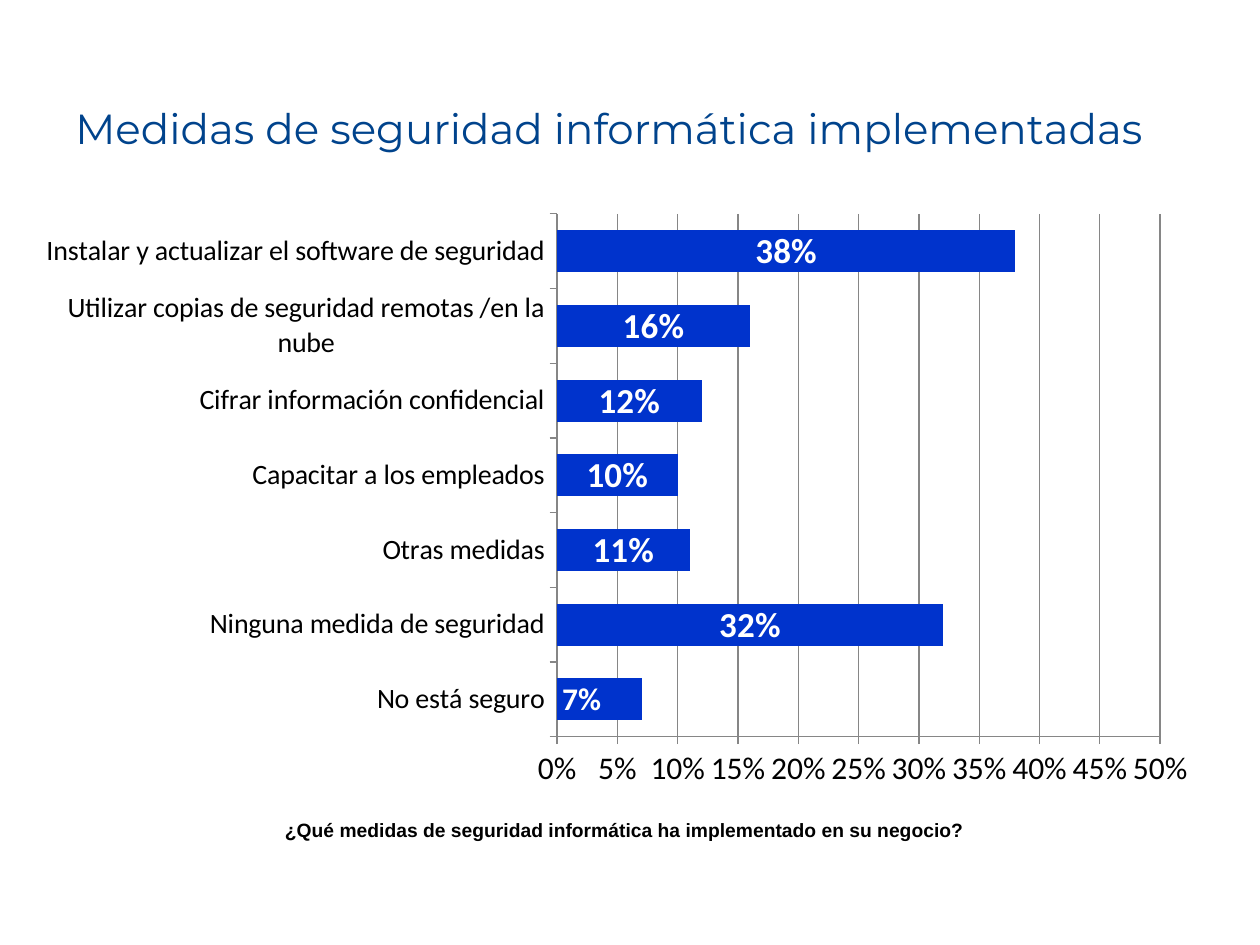
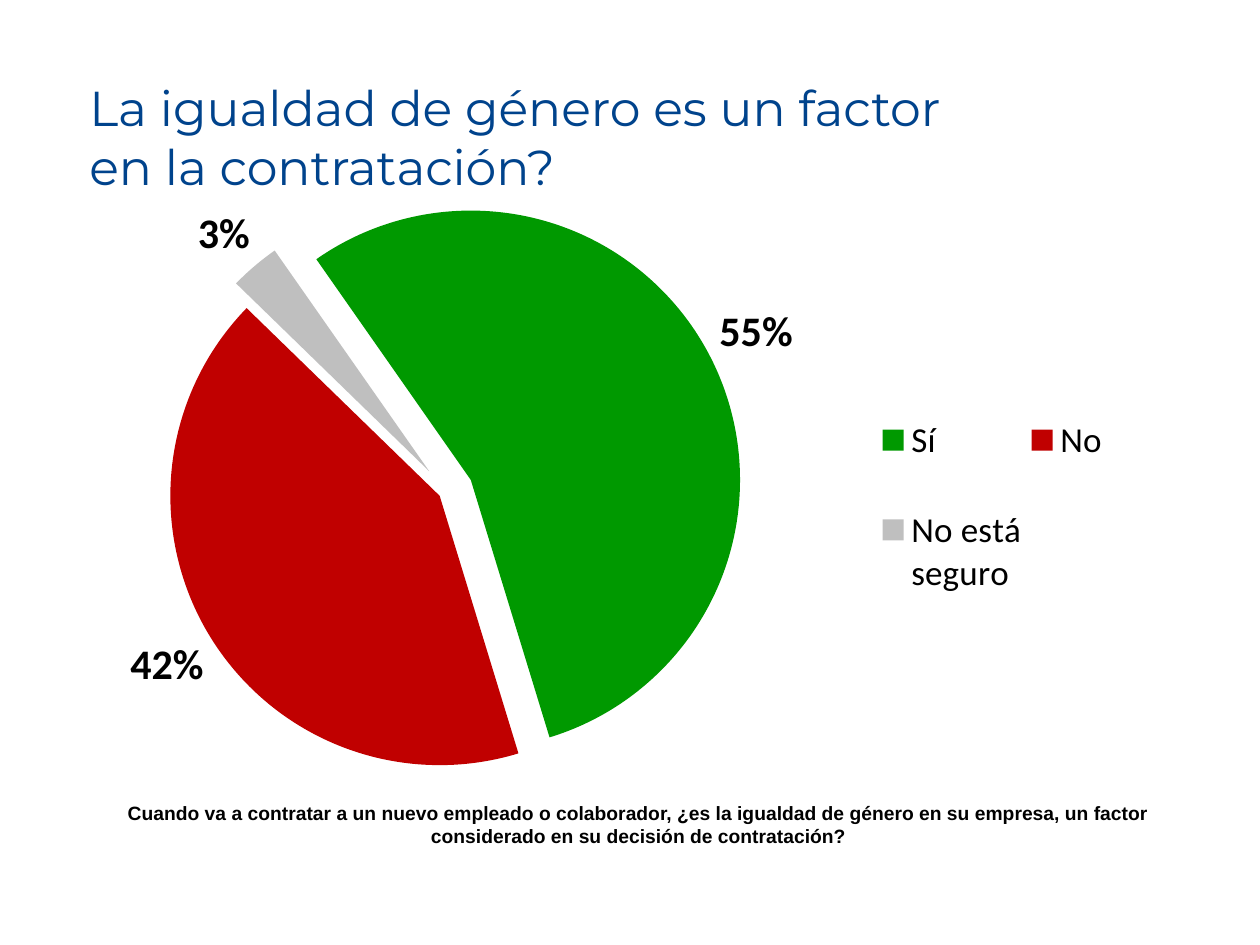
from dataclasses import dataclass

import lxml.etree
import pptx
import pptx.chart.data
import pptx.dml.color
import pptx.enum.chart
import pptx.enum.text
import pptx.oxml.ns
import pptx.util

Pt = pptx.util.Pt
qn = pptx.oxml.ns.qn
CHART_TYPE = pptx.enum.chart.XL_CHART_TYPE
LABEL_POSITION = pptx.enum.chart.XL_LABEL_POSITION
PERCENT = "0%"


@dataclass(frozen=True)
class Theme:
    title_color: str = "00438C"
    text: str = "000000"
    white: str = "FFFFFF"
    bar: str = "0033CC"
    grid: str = "868686"
    yes: str = "009900"
    no: str = "C00000"
    unsure: str = "BFBFBF"
    title_font: str = "Montserrat"
    question_font: str = "Arial"
    chart_font: str = "Calibri"
    long_title_size: int = 24
    title_size: int = 28
    question_size: int = 11
    category_size: int = 16
    chart_size: int = 18
    label_size: int = 20
    pie_label_size: int = 24


THEME = Theme()


def rgb(value):
    return pptx.dml.color.RGBColor.from_string(value)


def style_font(font, size, color, bold=False, name=THEME.chart_font):
    font.size = Pt(size)
    font.bold = bold
    font.name = name
    font.color.rgb = rgb(color)


def add_text(slide, box, text, size, color, name, bold=False, centered=False):
    shape = slide.shapes.add_textbox(*map(Pt, box))
    frame = shape.text_frame
    frame.word_wrap = True
    paragraph = frame.paragraphs[0]
    if centered:
        paragraph.alignment = pptx.enum.text.PP_ALIGN.CENTER
    run = paragraph.add_run()
    run.text = text
    style_font(run.font, size, color, bold, name)
    return frame


def add_title(slide, box, text, size):
    frame = add_text(slide, box, text, size, THEME.title_color, THEME.title_font)
    frame.vertical_anchor = pptx.enum.text.MSO_ANCHOR.MIDDLE


def add_question(slide, box, text):
    add_text(slide, box, text, THEME.question_size, THEME.text,
             THEME.question_font, bold=True, centered=True)


def add_value(parent, tag, value):
    return lxml.etree.SubElement(parent, qn(tag), val=str(value))


def make_layout(fractions, inner=False):
    """Return a manual layout from x, y, width and height as chart fractions."""
    layout = lxml.etree.Element(qn("c:layout"))
    manual = lxml.etree.SubElement(layout, qn("c:manualLayout"))
    if inner:
        add_value(manual, "c:layoutTarget", "inner")
    add_value(manual, "c:xMode", "edge")
    add_value(manual, "c:yMode", "edge")
    for side, fraction in zip("xywh", fractions):
        add_value(manual, f"c:{side}", fraction)
    return layout


def drop_children(element, tag):
    for child in element.findall(qn(tag)):
        element.remove(child)


def add_chart(slide, box, chart_type, shares, plot_area):
    data = pptx.chart.data.CategoryChartData(number_format=PERCENT)
    data.categories = list(shares)
    data.add_series("Series 1", list(shares.values()))
    chart = slide.shapes.add_chart(chart_type, *map(Pt, box), data).chart
    chart.has_title = False
    chart.has_legend = False
    style_font(chart.font, THEME.chart_size, THEME.text)
    area = chart._chartSpace.chart.plotArea
    drop_children(area, "c:layout")
    area.insert(0, make_layout(plot_area, inner=True))
    return chart


def show_labels(series, position, size, color):
    labels = series.data_labels
    labels.show_value = True
    labels.show_percentage = False
    labels.number_format = PERCENT
    labels.number_format_is_linked = False
    labels.position = position
    style_font(labels.font, size, color, bold=True)


def style_axes(chart):
    values = chart.value_axis
    values.minimum_scale = 0
    values.maximum_scale = 0.5
    values.major_unit = 0.05
    values.has_major_gridlines = True
    values.major_gridlines.format.line.color.rgb = rgb(THEME.grid)
    values.tick_labels.number_format = PERCENT
    values.tick_labels.number_format_is_linked = False
    for axis, size in ((values, THEME.chart_size),
                       (chart.category_axis, THEME.category_size)):
        axis.major_tick_mark = pptx.enum.chart.XL_TICK_MARK.OUTSIDE
        axis.format.line.color.rgb = rgb(THEME.grid)
        style_font(axis.tick_labels.font, size, THEME.text)


def add_measures_chart(slide, box):
    shares = {
        "No está seguro": 0.07,
        "Ninguna medida de seguridad": 0.32,
        "Otras medidas": 0.11,
        "Capacitar a los empleados": 0.1,
        "Cifrar información confidencial": 0.12,
        "Utilizar copias de seguridad remotas /en la nube": 0.16,
        "Instalar y actualizar el software de seguridad": 0.38,
    }
    chart = add_chart(slide, box, CHART_TYPE.BAR_STACKED, shares,
                      (0.44, 0.02, 0.52, 0.83))
    style_axes(chart)
    plot = chart.plots[0]
    plot.gap_width = 78
    plot.overlap = 100
    plot.vary_by_categories = False
    bars = plot.series[0]
    bars.format.fill.solid()
    bars.format.fill.fore_color.rgb = rgb(THEME.bar)
    show_labels(bars, LABEL_POSITION.CENTER, THEME.label_size, THEME.white)
    shortest_label = bars.points[0].data_label
    style_font(shortest_label.font, THEME.chart_size, THEME.white, bold=True)
    shortest_label.position = LABEL_POSITION.INSIDE_BASE


def rotate_pie(plot, start_angle):
    pie = plot._element
    drop_children(pie, "c:firstSliceAng")
    add_value(pie, "c:firstSliceAng", start_angle)


def style_slices(series, slices):
    """Give each slice its colour and its distance from the centre in percent."""
    for index, (color, distance) in enumerate(slices):
        fill = series.points[index].format.fill
        fill.solid()
        fill.fore_color.rgb = rgb(color)
        properties = series._element.findall(qn("c:dPt"))[index].find(qn("c:spPr"))
        properties.addprevious(
            lxml.etree.Element(qn("c:explosion"), val=str(distance)))


def add_pie_legend(chart):
    chart.has_legend = True
    legend = chart.legend
    legend.position = pptx.enum.chart.XL_LEGEND_POSITION.RIGHT
    legend.include_in_layout = False
    style_font(legend.font, THEME.label_size, THEME.text)
    element = legend._element
    drop_children(element, "c:layout")
    element.find(qn("c:legendPos")).addnext(
        make_layout((0.72, 0.3, 0.2, 0.45)))


def add_equality_chart(slide, box):
    shares = {"Sí": 0.55, "No": 0.42, "No está seguro": 0.03}
    chart = add_chart(slide, box, CHART_TYPE.PIE, shares,
                      (0.13, 0.05, 0.47, 0.9))
    plot = chart.plots[0]
    plot.vary_by_categories = True
    rotate_pie(plot, start_angle=325)
    series = plot.series[0]
    style_slices(series, ((THEME.yes, 10), (THEME.no, 3), (THEME.unsure, 10)))
    show_labels(series, LABEL_POSITION.OUTSIDE_END, THEME.pie_label_size, THEME.text)
    add_pie_legend(chart)


def build_measures_slide(slide):
    add_measures_chart(slide, (26.5, 115, 663, 360))
    add_title(slide, (36, 39, 648, 68),
              "Medidas de seguridad informática implementadas", THEME.long_title_size)
    add_question(slide, (36, 464, 642, 21),
                 "¿Qué medidas de seguridad informática ha implementado en su negocio?")


def build_equality_slide(slide):
    add_equality_chart(slide, (5, 110, 685.5, 342))
    add_question(slide, (44, 454.5, 642, 34),
                 "Cuando va a contratar a un nuevo empleado o colaborador, ¿es la igualdad "
                 "de género en su empresa, un factor considerado en su decisión de contratación?")
    add_title(slide, (44, 41, 528, 74),
              "La igualdad de género es un factor en la contratación?", THEME.title_size)


def main():
    presentation = pptx.Presentation()
    presentation.slide_width = Pt(720)
    presentation.slide_height = Pt(540)
    blank = presentation.slide_layouts[6]
    for build in (build_measures_slide, build_equality_slide):
        build(presentation.slides.add_slide(blank))
    presentation.save("out.pptx")


if __name__ == "__main__":
    main()
